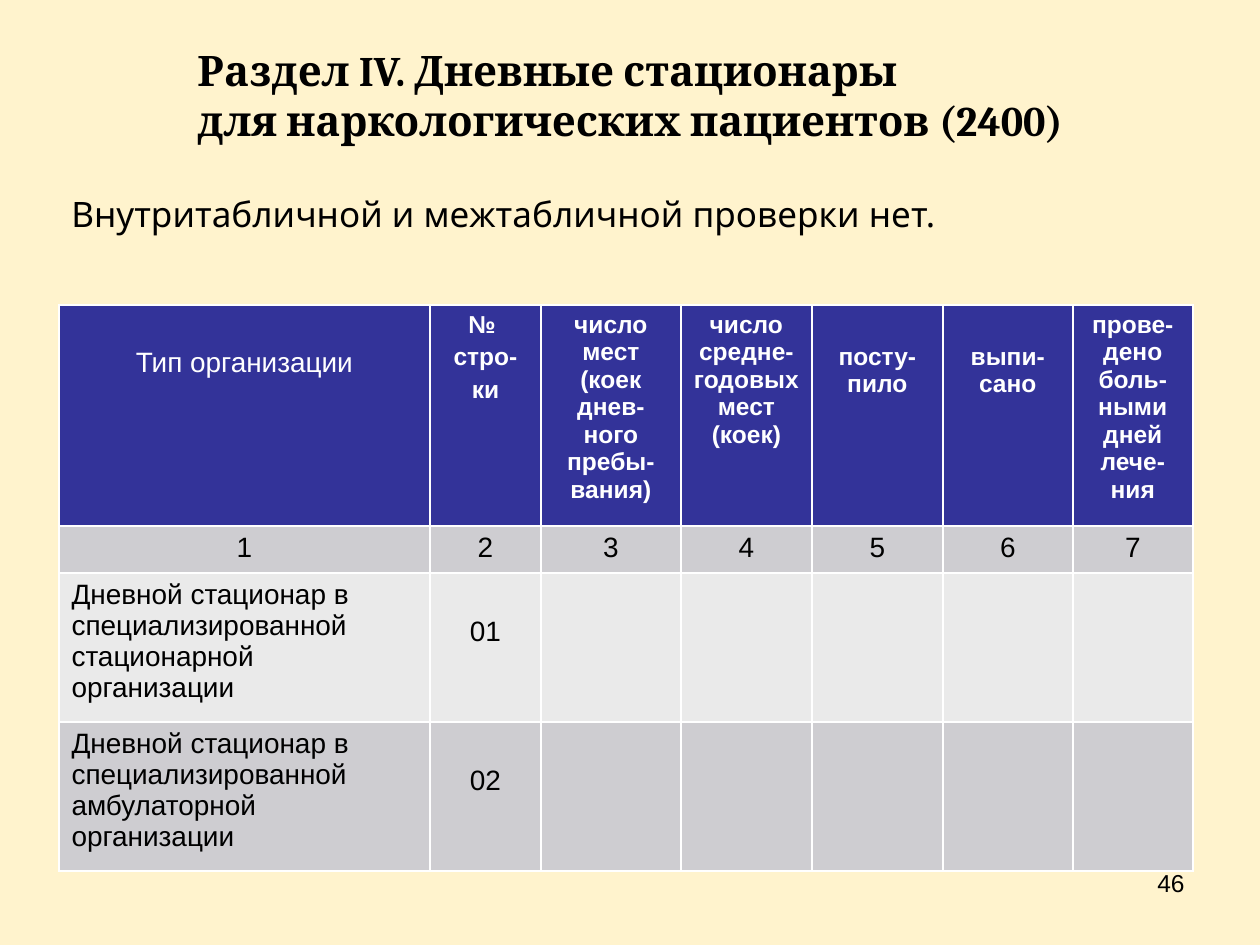
import pptx
import pptx.dml.color
import pptx.enum.text
import pptx.oxml
import pptx.oxml.ns
import pptx.util

RGBColor = pptx.dml.color.RGBColor
ALIGN = pptx.enum.text.PP_ALIGN
SCALE = 914400 / 126  # EMU in one px

CREAM = RGBColor(0xFF, 0xF3, 0xCD)
BLACK = RGBColor(0, 0, 0)
WHITE = RGBColor(0xFF, 0xFF, 0xFF)
NAVY = RGBColor(0x33, 0x33, 0x99)
GREY = RGBColor(0xCE, 0xCD, 0xD1)
PALE = RGBColor(0xEA, 0xEA, 0xEA)


def px(length):
    return pptx.util.Emu(round(length * SCALE))


def write(frame, text, font="Arial", size=16, bold=False, color=BLACK,
          align=ALIGN.LEFT, before=0):
    """Fill a text frame, one paragraph for each line of text."""
    frame.word_wrap = True
    for index, line in enumerate(text.split("\n")):
        para = frame.paragraphs[0] if index == 0 else frame.add_paragraph()
        para.alignment = align
        para.space_before = pptx.util.Pt(before)
        span = para.add_run()
        span.text = line
        span.font.name = font
        span.font.size = pptx.util.Pt(size)
        span.font.bold = bold
        span.font.color.rgb = color


class SlideBuilder:
    def __init__(self, deck, background):
        self.page = deck.slides.add_slide(deck.slide_layouts[6])
        self.page.background.fill.solid()
        self.page.background.fill.fore_color.rgb = background

    def text(self, left, top, width, height, text, **style):
        box = self.page.shapes.add_textbox(px(left), px(top), px(width), px(height))
        write(box.text_frame, text, **style)

    def table(self, left, top, widths, heights):
        frame = self.page.shapes.add_table(
            len(heights), len(widths), px(left), px(top),
            px(sum(widths)), px(sum(heights)))
        table = frame.table
        for column, width in zip(table.columns, widths):
            column.width = px(width)
        for row, height in zip(table.rows, heights):
            row.height = px(height)
        return table

    def cell(self, cell, fill, text="", inset=6, **style):
        cell.fill.solid()
        cell.fill.fore_color.rgb = fill
        cell.margin_top = px(inset)
        self.borders(cell, WHITE)
        if text:
            write(cell.text_frame, text, **style)

    def borders(self, cell, color):
        properties = cell._tc.get_or_add_tcPr()
        for index, side in enumerate(("lnL", "lnR", "lnT", "lnB")):
            properties.insert(index, pptx.oxml.parse_xml(
                f'<a:{side} {pptx.oxml.ns.nsdecls("a")} w="12700"><a:solidFill>'
                f'<a:srgbClr val="{color}"/></a:solidFill></a:{side}>'))


def main():
    deck = pptx.Presentation()
    deck.slide_width, deck.slide_height = px(1260), px(945)
    slide = SlideBuilder(deck, CREAM)

    # Title and remark
    slide.text(185, 38, 960, 115,
               "Раздел IV. Дневные стационары\nдля наркологических пациентов (2400)",
               font="Cambria", size=24, bold=True)
    slide.text(59, 186, 1134, 60, "Внутритабличной и межтабличной проверки нет.",
               font="Noto Sans", size=20)

    # Table header: text, inset from the top
    table = slide.table(59, 305, [371, 111, 140, 131, 131, 130, 120],
                        [221, 47, 149, 149])
    headings = [
        ("Тип организации", 42),
        ("№ \nстро-\nки", 6),
        ("число мест (коек днев-ного пребы-вания)", 6),
        ("число средне-годовых мест (коек)", 6),
        ("посту-пило", 38),
        ("выпи-сано", 38),
        ("прове-дено боль-ными дней лече-ния", 6),
    ]
    for column, (heading, inset) in enumerate(headings):
        first = column == 0
        slide.cell(table.cell(0, column), NAVY, heading, inset, color=WHITE,
                   size=16 if first else 14, bold=not first,
                   align=ALIGN.CENTER, before=2.8)

    # Column numbers
    for column in range(len(headings)):
        slide.cell(table.cell(1, column), GREY, str(column + 1), align=ALIGN.CENTER)

    # Organisation rows
    kinds = [("стационарной", PALE), ("амбулаторной", GREY)]
    for number, (kind, fill) in enumerate(kinds, 1):
        row = number + 1
        slide.cell(table.cell(row, 0), fill,
                   f"Дневной стационар в специализированной {kind} организации")
        slide.cell(table.cell(row, 1), fill, f"{number:02}", 43, align=ALIGN.CENTER)
        for column in range(2, len(headings)):
            slide.cell(table.cell(row, column), fill)

    # Page number
    slide.text(903, 862, 294, 65, "46", size=14, align=ALIGN.RIGHT)

    deck.save("out.pptx")


if __name__ == "__main__":
    main()
